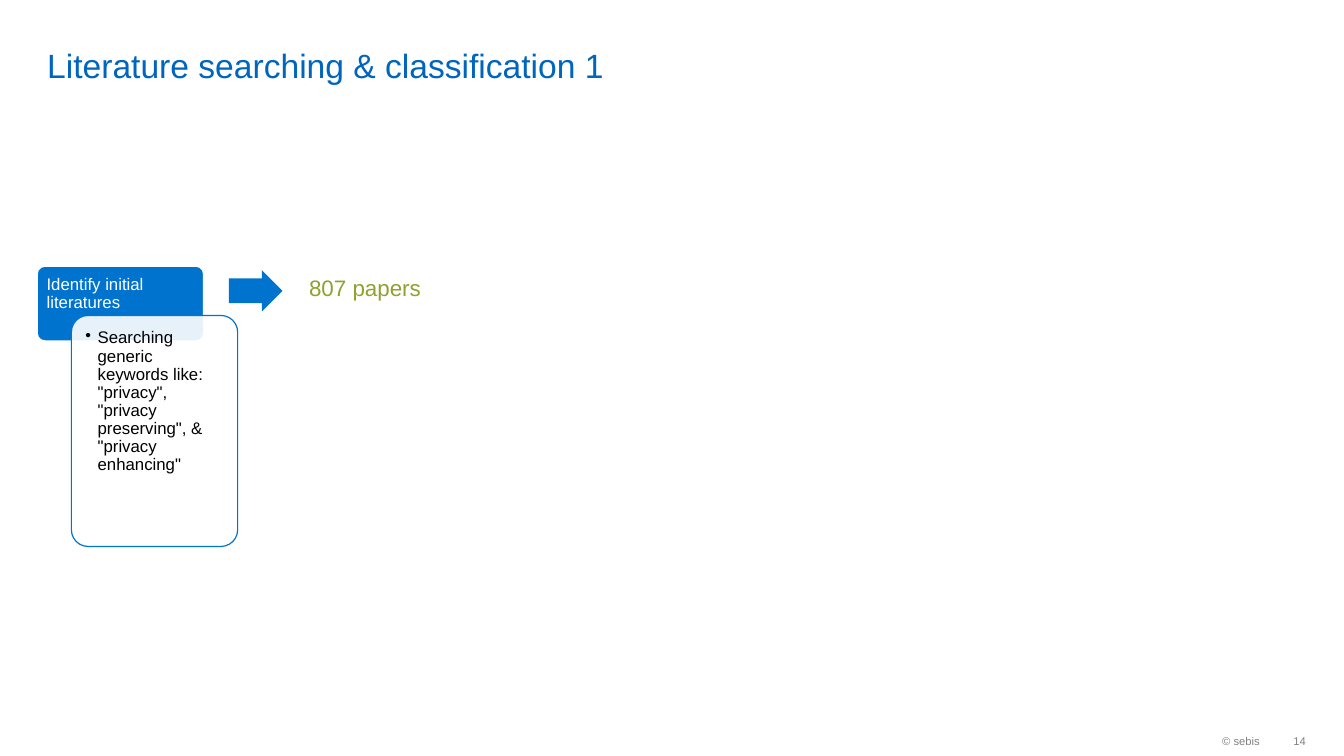
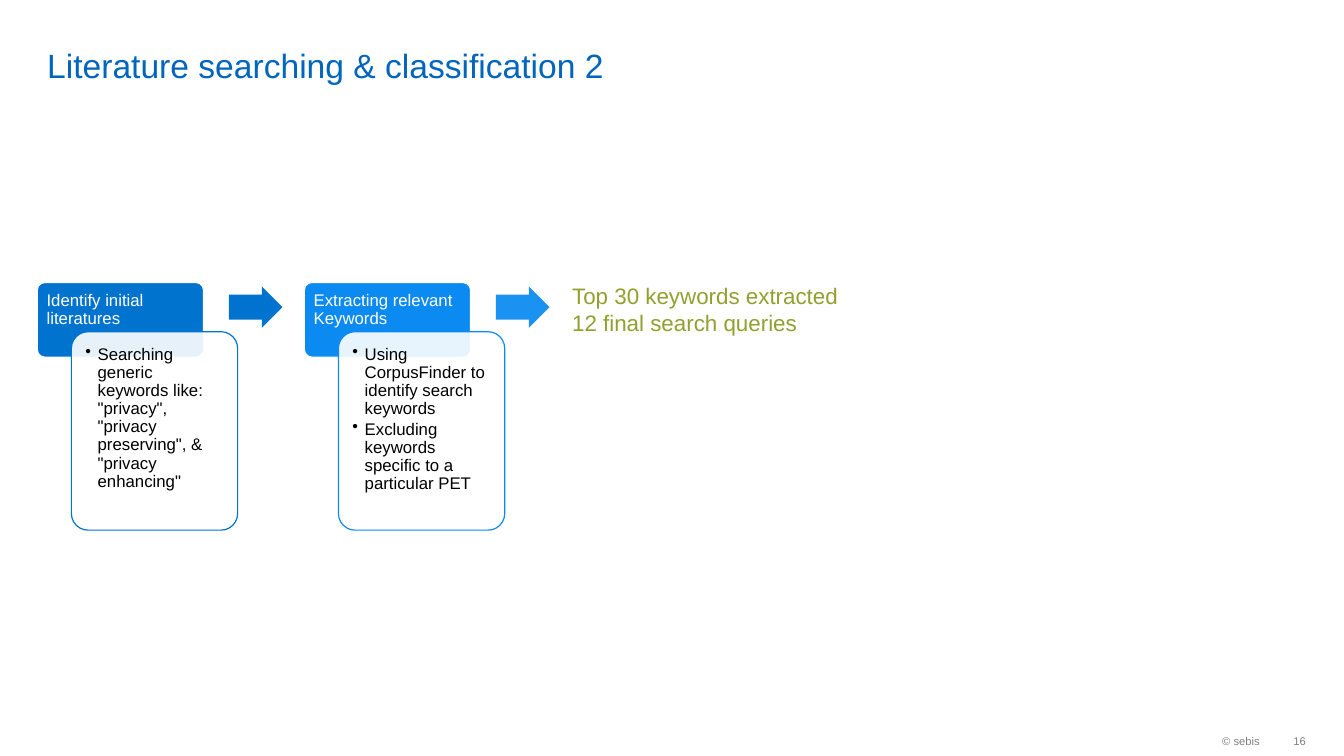
import pptx
import pptx.dml.color
import pptx.enum.shapes
import pptx.enum.text
import pptx.oxml
import pptx.oxml.ns
import pptx.util

Cm = pptx.util.Cm
Pt = pptx.util.Pt
RGBColor = pptx.dml.color.RGBColor
Shape = pptx.enum.shapes.MSO_SHAPE
Anchor = pptx.enum.text.MSO_ANCHOR
Align = pptx.enum.text.PP_ALIGN

# Shared style
FONT = "Arial"
WHITE = RGBColor(0xFF, 0xFF, 0xFF)
BLACK = RGBColor(0x00, 0x00, 0x00)
GREY = RGBColor(0x80, 0x80, 0x80)
TITLE_BLUE = RGBColor(0x00, 0x65, 0xBD)
DARK_BLUE = RGBColor(0x00, 0x73, 0xCF)
LIGHT_BLUE = RGBColor(0x0B, 0x8B, 0xF1)
ARROW_LIGHT_BLUE = RGBColor(0x19, 0x92, 0xF1)
GREEN = RGBColor(0x91, 0xA0, 0x2F)

# Process layout in centimetres
STEP_LEFT, STEP_PITCH, PROCESS_MIDDLE = 0.94, 6.73, 10.24
STEP_WIDTH, HEADER_HEIGHT = 4.19, 1.88
DETAIL_SHIFT, DETAIL_DROP = 0.86, 1.24
ARROW_SHIFT, ARROW_DROP = 4.83, 0.1

# Process steps: heading, details, box colour, arrow colour
IDENTIFY = ("Identify initial literatures",
            ['Searching generic keywords like: "privacy", "privacy preserving", & "privacy enhancing"'],
            DARK_BLUE, DARK_BLUE)
EXTRACT = ("Extracting relevant Keywords",
           ["Using CorpusFinder to identify search keywords",
            "Excluding keywords specific to a particular PET"],
           LIGHT_BLUE, ARROW_LIGHT_BLUE)


def write_text(shape, lines, size, color, insets, anchor=Anchor.TOP,
               align=Align.LEFT, line_spacing=None, bullets=False):
    """Fill a shape with one paragraph per line; insets are left, top, right, bottom."""
    frame = shape.text_frame
    frame.word_wrap = True
    frame.vertical_anchor = anchor
    (frame.margin_left, frame.margin_top,
     frame.margin_right, frame.margin_bottom) = map(Cm, insets)
    for index, line in enumerate(lines):
        paragraph = frame.add_paragraph() if index else frame.paragraphs[0]
        paragraph.alignment = align
        if line_spacing:
            paragraph.line_spacing = line_spacing
        if bullets:
            paragraph.space_after = Pt(1.8)
            add_bullet(paragraph)
        run = paragraph.add_run()
        run.text = line
        run.font.name = FONT
        run.font.size = Pt(size)
        run.font.color.rgb = color


def add_bullet(paragraph):
    properties = paragraph._p.get_or_add_pPr()
    properties.set("marL", str(Cm(0.31)))
    properties.set("indent", str(-Cm(0.31)))
    bullet = pptx.oxml.parse_xml(
        f'<a:buChar {pptx.oxml.ns.nsdecls("a")} char="•"/>')
    properties.append(bullet)


def add_text(slide, lines, box, size, color, insets=(0.25, 0.13, 0.25, 0.13), **options):
    text_box = slide.shapes.add_textbox(*map(Cm, box))
    write_text(text_box, lines, size, color, insets, **options)


def add_block(slide, kind, box, fill, line=None, opacity=None):
    shape = slide.shapes.add_shape(kind, *map(Cm, box))
    shape.shadow.inherit = False
    shape.fill.solid()
    shape.fill.fore_color.rgb = fill
    if opacity is not None:
        color = shape._element.spPr.find(".//" + pptx.oxml.ns.qn("a:srgbClr"))
        color.append(pptx.oxml.parse_xml(
            f'<a:alpha {pptx.oxml.ns.nsdecls("a")} val="{opacity * 1000}"/>'))
    if line is None:
        shape.line.fill.background()
    else:
        shape.line.color.rgb = line
        shape.line.width = Pt(0.85)
    return shape


def add_step(slide, index, detail_height, step):
    """Draw a heading box, the overlapping detail box and the arrow onward."""
    heading, details, box_color, arrow_color = step
    left = STEP_LEFT + index * STEP_PITCH
    top = PROCESS_MIDDLE - (DETAIL_DROP + detail_height) / 2

    header = add_block(slide, Shape.ROUNDED_RECTANGLE,
                       (left, top, STEP_WIDTH, HEADER_HEIGHT), box_color, WHITE)
    header.adjustments[0] = 0.1
    write_text(header, [heading], 12, WHITE, (0.18, 0.18, 0.18, 0.1), line_spacing=0.9)

    detail = add_block(slide, Shape.ROUNDED_RECTANGLE,
                       (left + DETAIL_SHIFT, top + DETAIL_DROP, STEP_WIDTH, detail_height),
                       WHITE, box_color, opacity=90)
    detail.adjustments[0] = 0.1
    write_text(detail, details, 12, BLACK, (0.23,) * 4, line_spacing=0.9, bullets=True)

    arrow = add_block(slide, Shape.RIGHT_ARROW,
                      (left + ARROW_SHIFT, top + ARROW_DROP, 1.35, 1.04), arrow_color)
    arrow.adjustments[0] = 0.6
    arrow.adjustments[1] = 0.5


def add_process_slide(presentation, title, number, steps, detail_height, result, result_box):
    slide = presentation.slides.add_slide(presentation.slide_layouts[6])
    # Title
    add_text(slide, [title], (0.94, 0.13, 29.41, 2.01), 24, TITLE_BLUE,
             insets=(0.25, 0, 0.25, 0), anchor=Anchor.BOTTOM)
    # Process and its result
    for index, step in enumerate(steps):
        add_step(slide, index, detail_height, step)
    add_text(slide, result, result_box, 16, GREEN)
    # Footer
    add_text(slide, ["© sebis"], (26.06, 18.26, 5.94, 0.81), 8, GREY,
             anchor=Anchor.MIDDLE, align=Align.RIGHT)
    add_text(slide, [str(number)], (32, 18.26, 0.91, 0.81), 8, GREY,
             insets=(0.25, 0.13, 0, 0.13), anchor=Anchor.MIDDLE, align=Align.RIGHT)


def main():
    presentation = pptx.Presentation()
    presentation.slide_width = Cm(33.87)
    presentation.slide_height = Cm(19.05)
    add_process_slide(presentation, "Literature searching & classification 1", 14,
                      [IDENTIFY], 5.82, ["807 papers"], (7.54, 6.78, 3.73, 0.94))
    add_process_slide(presentation, "Literature searching & classification 2", 16,
                      [IDENTIFY, EXTRACT], 5,
                      ["Top 30 keywords extracted", "12 final search queries"],
                      (14.17, 6.99, 8.26, 1.63))
    presentation.save("out.pptx")


if __name__ == "__main__":
    main()
